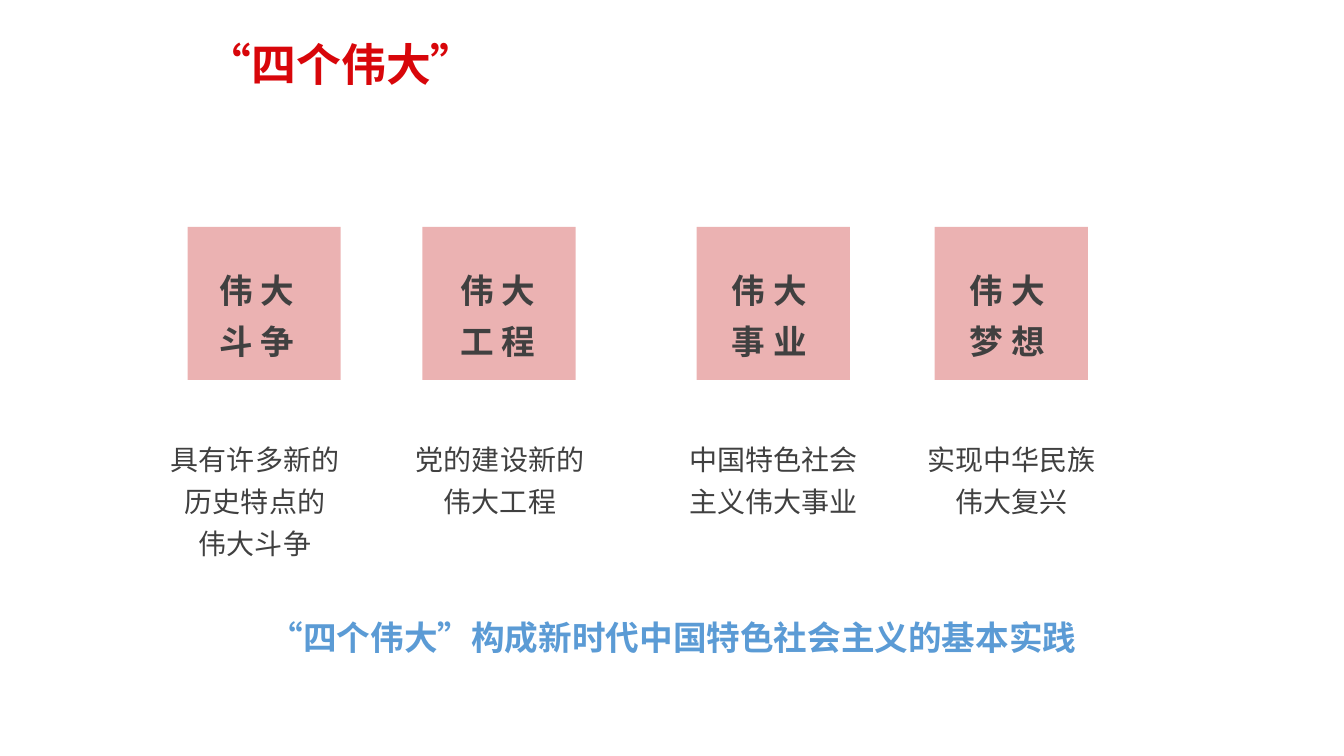
from lxml import etree
from pptx import Presentation
from pptx.dml.color import RGBColor
from pptx.enum import shapes, text
from pptx.oxml.ns import qn
from pptx.util import Inches, Pt

COLORS = {"red": "D8060A", "square": "C00000", "body": "404040", "blue": "5B9BD5"}
FONT = "Noto Sans CJK SC"
ALIGN = text.PP_ALIGN

# Square left, label left, description left, label lines, description lines
GREATS = [
    (1.86, 2.08, 1.53, ["伟 大", "斗 争"], ["具有许多新的历史特点的", "伟大斗争"]),
    (4.19, 4.47, 3.96, ["伟 大", "工 程"], ["党的建设新的伟大工程"]),
    (6.91, 7.16, 6.67, ["伟 大", "事 业"], ["中国特色社会主义伟大事业"]),
    (9.27, 9.52, 9.03, ["伟 大", "梦 想"], ["实现中华民族伟大复兴"]),
]


class Deck:
    def __init__(self):
        self.prs = Presentation()
        self.prs.slide_width, self.prs.slide_height = Inches(13.33), Inches(7.5)
        self.s = self.prs.slides.add_slide(self.prs.slide_layouts[5])

    def fill_text(self, tf, lines, size, color, bold, align, spacing, wrap=True):
        tf.word_wrap = wrap
        tf.auto_size = text.MSO_AUTO_SIZE.NONE
        tf.vertical_anchor = text.MSO_ANCHOR.TOP
        tf.text = "\n".join(lines)
        for p in tf.paragraphs:
            p.alignment, p.line_spacing = align, spacing
            for r in p.runs:
                f = r.font
                f.size, f.bold, f.name = Pt(size), bold, FONT
                f.color.rgb = RGBColor.from_string(COLORS[color])
                # East Asian language and typeface
                rPr = r._r.get_or_add_rPr()
                rPr.set("lang", "zh-CN")
                etree.SubElement(rPr, qn("a:ea")).set("typeface", FONT)

    def title(self, line, x, y, w, h):
        sp = self.s.shapes.title
        sp.left, sp.top, sp.width, sp.height = map(Inches, (x, y, w, h))
        self.fill_text(sp.text_frame, [line], 32, "red", True, ALIGN.LEFT, 1.0)

    def label(self, lines, x, y, w, h, size, color="body", bold=False,
              align=ALIGN.CENTER, wrap=True):
        sp = self.s.shapes.add_textbox(*map(Inches, (x, y, w, h)))
        self.fill_text(sp.text_frame, lines, size, color, bold, align, 1.25, wrap)

    def square(self, x, y, side):
        sp = self.s.shapes.add_shape(shapes.MSO_SHAPE.RECTANGLE,
                                     *map(Inches, (x, y, side, side)))
        sp.shadow.inherit = False
        sp.fill.solid()
        sp.fill.fore_color.rgb = RGBColor.from_string(COLORS["square"])
        # 30 % opacity
        clr = sp._element.spPr.find(".//" + qn("a:srgbClr"))
        etree.SubElement(clr, qn("a:alpha")).set("val", "30000")
        sp.line.fill.background()


def main():
    deck = Deck()
    deck.title("“四个伟大”", 1.95, 0.31, 3.62, 0.64)

    # Four columns: square, name and description
    for square_x, name_x, desc_x, name, desc in GREATS:
        deck.square(square_x, 2.25, 1.52)
        deck.label(name, name_x, 2.53, 0.98, 1.11, 24, bold=True,
                   align=ALIGN.JUSTIFY, wrap=False)
        deck.label(desc, desc_x, 4.26, 2, 0.45 + 0.45 * len(desc), 20)

    # Conclusion
    deck.label(["“四个伟大”构成新时代中国特色社会主义的基本实践"],
               2.52, 5.97, 8.31, 0.61, 24, "blue", True)

    deck.prs.save("out.pptx")


if __name__ == "__main__":
    main()
